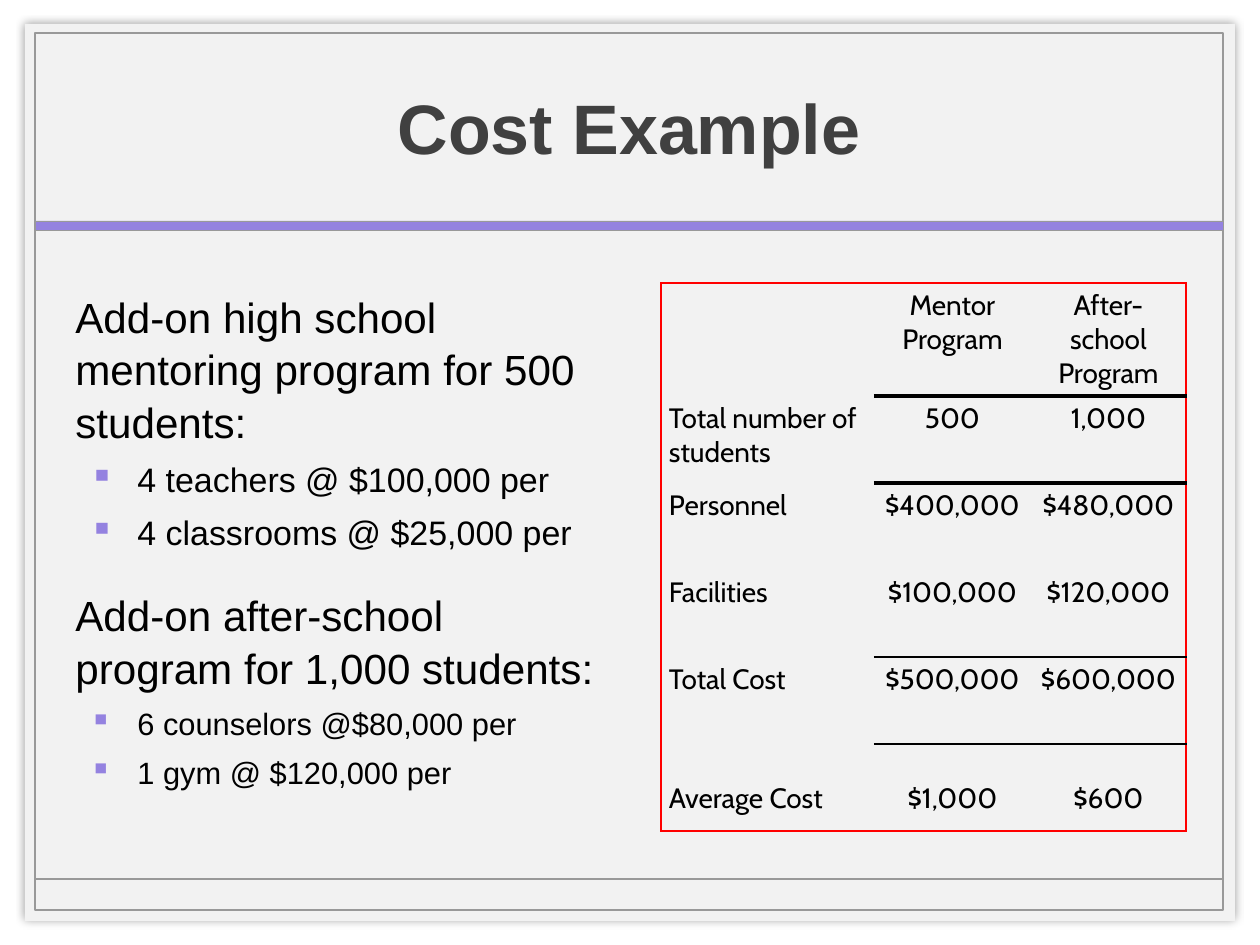
from dataclasses import dataclass
from typing import Optional

from lxml.etree import SubElement
from pptx import Presentation
from pptx.dml.color import RGBColor
from pptx.enum.shapes import MSO_CONNECTOR as Connector, MSO_SHAPE as Shape
from pptx.enum.text import MSO_ANCHOR as Anchor, PP_ALIGN as Align
from pptx.oxml import parse_xml
from pptx.oxml.ns import nsdecls, qn
from pptx.util import Emu, Pt

COLORS = {
    "panel": "F2F2F2",
    "frame": "999999",
    "accent": "9482E0",
    "title": "404040",
    "text": "000000",
    "outline": "FF0000",
}
EMU_PER_PX = 914400 / 126


@dataclass(frozen=True)
class Box:
    left: int
    top: int
    width: int
    height: int
    fill: Optional[str] = None
    line: Optional[float] = None


@dataclass(frozen=True)
class Item:
    text: str
    size: float
    before: int
    bullet: bool = False


PANEL = Box(25, 24, 1210, 897, fill="panel")
FRAME = Box(35, 33, 1188, 877, line=1)
BAND = Box(35, 221, 1188, 9, fill="accent", line=0.25)
TITLE = Box(123, 34, 1012, 185)
BODY = Box(63, 283, 552, 553)

ITEMS = [
    Item("Add-on high school mentoring program for 500 students:", 24.1, 0),
    Item("4 teachers @ $100,000 per", 19.4, 6, True),
    Item("4 classrooms @ $25,000 per", 19.4, 6, True),
    Item("Add-on after-school program for 1,000 students:", 24.1, 20),
    Item("6 counselors @$80,000 per", 17.6, 6, True),
    Item("1 gym @ $120,000 per", 17.6, 6, True),
]

COSTS = [
    ("", "Mentor Program", "After-school Program"),
    ("Total number of students", "500", "1,000"),
    ("Personnel", "$400,000", "$480,000"),
    ("Facilities", "$100,000", "$120,000"),
    ("Total Cost", "$500,000", "$600,000"),
    ("Average Cost", "$1,000", "$600"),
]
COLUMN_WIDTHS = [213, 157, 155]
ROW_HEIGHTS = [113] + [87] * 5
RULES_BELOW = {0: 3, 1: 3, 3: 1, 4: 1.5}
LAST_ROW = len(COSTS) - 1
LAST_COLUMN = len(COLUMN_WIDTHS) - 1


def px(value: int) -> Emu:
    return Emu(round(value * EMU_PER_PX))


def color(name: str) -> RGBColor:
    return RGBColor.from_string(COLORS[name])


def apply_format(target, values: dict) -> None:
    for name, value in values.items():
        setattr(target, name, value)


def place(box: Box) -> tuple:
    return px(box.left), px(box.top), px(box.width), px(box.height)


def add_rectangle(slide, box: Box):
    shape = slide.shapes.add_shape(Shape.RECTANGLE, *place(box))
    shape.shadow.inherit = False
    if box.fill:
        shape.fill.solid()
        shape.fill.fore_color.rgb = color(box.fill)
    else:
        shape.fill.background()
    if box.line:
        shape.line.color.rgb = color("frame")
        shape.line.width = Pt(box.line)
    else:
        shape.line.fill.background()
    return shape


def add_glow_shadow(shape) -> None:
    effects = shape._element.spPr.find(qn("a:effectLst"))
    effects.append(parse_xml(
        f'<a:outerShdw {nsdecls("a")} blurRad="{Pt(5)}" dist="0" dir="0">'
        '<a:srgbClr val="000000"><a:alpha val="40000"/></a:srgbClr></a:outerShdw>'
    ))


def add_footer_line(slide) -> None:
    line = slide.shapes.add_connector(
        Connector.STRAIGHT, px(35), px(879), px(1223), px(879))
    line.line.color.rgb = color("frame")
    line.line.width = Pt(1)
    SubElement(line._element.spPr, qn("a:effectLst"))


def add_text(paragraph, text: str, color_name: str, font: dict) -> None:
    run = paragraph.add_run()
    run.text = text
    apply_format(run.font, font)
    run.font.color.rgb = color(color_name)


def add_text_frame(slide, box: Box, anchor: Anchor):
    frame = slide.shapes.add_textbox(*place(box)).text_frame
    apply_format(frame, {"word_wrap": True, "vertical_anchor": anchor})
    return frame


def add_title(slide) -> None:
    paragraph = add_text_frame(slide, TITLE, Anchor.MIDDLE).paragraphs[0]
    paragraph.alignment = Align.CENTER
    add_text(paragraph, "Cost Example", "title",
             {"name": "Arial", "size": Pt(40), "bold": True})


def add_bullet(paragraph) -> None:
    properties = paragraph._p.get_or_add_pPr()
    properties.set("marL", str(px(62)))
    properties.set("indent", str(px(-48)))
    bullet_color = SubElement(properties, qn("a:buClr"))
    SubElement(bullet_color, qn("a:srgbClr"), val=COLORS["accent"])
    SubElement(properties, qn("a:buChar"), char="▪")


def add_body(slide) -> None:
    frame = add_text_frame(slide, BODY, Anchor.TOP)
    for index, item in enumerate(ITEMS):
        paragraph = frame.add_paragraph() if index else frame.paragraphs[0]
        apply_format(paragraph, {"space_before": Pt(item.before), "line_spacing": 1.04})
        if item.bullet:
            paragraph.level = 1
            add_bullet(paragraph)
        add_text(paragraph, item.text, "text", {"name": "Arial", "size": Pt(item.size)})


def cell_borders(row: int, column: int) -> dict:
    outline = ("outline", 1)

    def rule(above: int):
        return ("text", RULES_BELOW[above]) if column and above in RULES_BELOW else None

    return {
        "L": outline if column == 0 else None,
        "R": outline if column == LAST_COLUMN else None,
        "T": outline if row == 0 else rule(row - 1),
        "B": outline if row == LAST_ROW else rule(row),
    }


def set_borders(cell, borders: dict) -> None:
    properties = cell._tc.get_or_add_tcPr()
    for index, (side, border) in enumerate(borders.items()):
        name, width = border or (None, 0)
        paint = (f'<a:solidFill><a:srgbClr val="{COLORS[name]}"/></a:solidFill>'
                 if name else "<a:noFill/>")
        properties.insert(index, parse_xml(
            f'<a:ln{side} {nsdecls("a")} w="{Pt(width)}">{paint}</a:ln{side}>'))


def add_cost_table(slide) -> None:
    box = Box(661, 283, sum(COLUMN_WIDTHS), sum(ROW_HEIGHTS))
    table = slide.shapes.add_table(len(COSTS), len(COLUMN_WIDTHS), *place(box)).table
    apply_format(table, {"first_row": False, "horz_banding": False})
    for column, width in zip(table.columns, COLUMN_WIDTHS):
        column.width = px(width)
    for row, height in zip(table.rows, ROW_HEIGHTS):
        row.height = px(height)
    for row, texts in enumerate(COSTS):
        for column, text in enumerate(texts):
            cell = table.cell(row, column)
            apply_format(cell, {
                "margin_left": px(8), "margin_right": px(8), "margin_bottom": px(6),
                "margin_top": px(38 if row == LAST_ROW else 6),
            })
            cell.fill.background()
            set_borders(cell, cell_borders(row, column))
            if text:
                paragraph = cell.text_frame.paragraphs[0]
                paragraph.alignment = Align.CENTER if column else Align.LEFT
                add_text(paragraph, text, "text", {"name": "Cabin", "size": Pt(16)})


def main() -> None:
    presentation = Presentation()
    apply_format(presentation, {"slide_width": px(1260), "slide_height": px(945)})
    slide = presentation.slides.add_slide(presentation.slide_layouts[6])
    add_glow_shadow(add_rectangle(slide, PANEL))
    add_rectangle(slide, FRAME)
    add_footer_line(slide)
    add_rectangle(slide, BAND)
    add_title(slide)
    add_body(slide)
    add_cost_table(slide)
    presentation.save("out.pptx")


if __name__ == "__main__":
    main()
